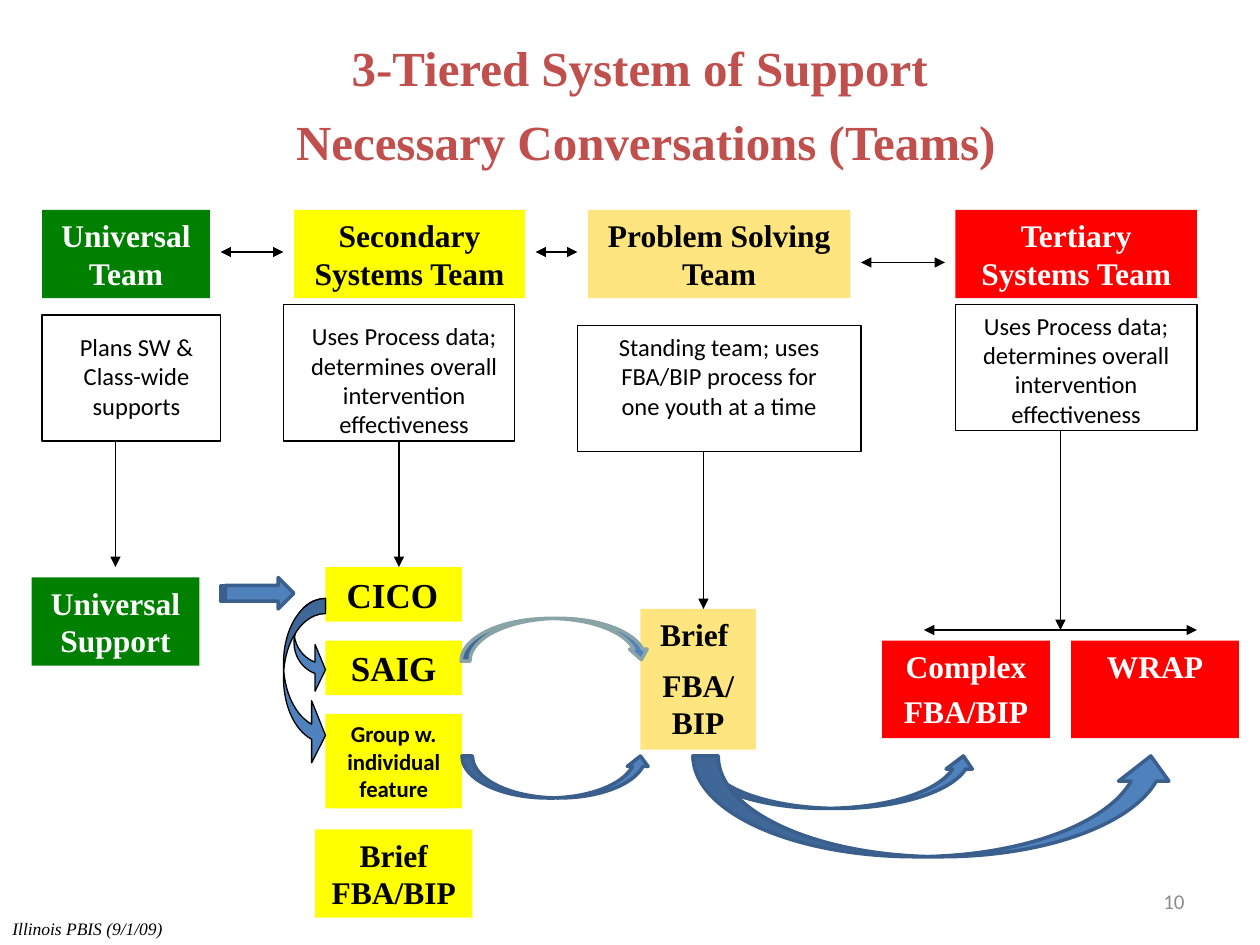
from dataclasses import dataclass
from lxml.etree import SubElement
from pptx import Presentation
from pptx.dml.color import RGBColor
from pptx.enum.shapes import MSO_CONNECTOR, MSO_SHAPE
from pptx.enum.text import MSO_ANCHOR, MSO_AUTO_SIZE, PP_ALIGN
from pptx.oxml.ns import qn
from pptx.util import Emu, Pt

PX = 914400 // 120


@dataclass(frozen=True)
class Theme:
    """Hold the colours, fonts and type sizes."""
    black: str = "000000"
    white: str = "FFFFFF"
    brick: str = "C0504D"
    green: str = "008000"
    yellow: str = "FFFF00"
    gold: str = "FFCC00"
    red: str = "FF0000"
    blue: str = "4F81BD"
    navy: str = "3A5F8C"
    sage: str = "89A4A7"
    grey: str = "8C8C8C"
    serif: str = "Times New Roman"
    sans: str = "Calibri"
    title: int = 28
    large: int = 20
    head: int = 18
    body: int = 14
    small: int = 13
    page: int = 12
    foot: int = 10


T = Theme()
LEFT, MID, RIGHT = PP_ALIGN.LEFT, PP_ALIGN.CENTER, PP_ALIGN.RIGHT


def px(*vals):
    """Turn pixel lengths into EMU."""
    return [Emu(v * PX) for v in vals]


def apply(obj, vals):
    """Set each attribute named in a dict."""
    for key, val in vals.items():
        setattr(obj, key, val)


def paint(fill, hue, alpha=100):
    """Fill with one colour, see-through if alpha is under 100."""
    fill.solid()
    fill.fore_color.rgb = RGBColor.from_string(hue)
    if alpha < 100:
        node = fill._xPr.find(qn("a:solidFill"))[0]
        SubElement(node, qn("a:alpha"), val=str(alpha * 1000))


def write(shape, paras, size, hue=T.black, face=T.serif, bold=False,
          slant=False, align=MID, gap=0, grow=True, anchor=MSO_ANCHOR.TOP):
    """Put styled paragraphs into a shape, gap in percent of a line."""
    frame = shape.text_frame
    apply(frame, {
        "word_wrap": True, "vertical_anchor": anchor,
        "auto_size": MSO_AUTO_SIZE.SHAPE_TO_FIT_TEXT if grow else MSO_AUTO_SIZE.NONE,
    })
    look = {"name": face, "size": Pt(size), "bold": bold, "italic": slant}
    for i, words in enumerate(paras):
        para = frame.add_paragraph() if i else frame.paragraphs[0]
        apply(para, {"text": words, "alignment": align})
        space = SubElement(para._p.get_or_add_pPr(), qn("a:spcBef"))
        SubElement(space, qn("a:spcPct"), val=str(gap * 1000))
        for run in para.runs:
            apply(run.font, look)
            run.font.color.rgb = RGBColor.from_string(hue)


def label(slide, at, paras, size, **style):
    """Add a text box."""
    write(slide.shapes.add_textbox(*px(*at)), paras, size, **style)


def form(slide, kind, at, fill=None, line=None, width=0.75, alpha=100):
    """Add a flat preset shape."""
    shape = slide.shapes.add_shape(kind, *px(*at))
    shape.shadow.inherit = False
    if fill:
        paint(shape.fill, fill, alpha)
    else:
        shape.fill.background()
    if line:
        paint(shape.line.fill, line)
        shape.line.width = Pt(width)
    else:
        shape.line.fill.background()
    return shape


def block(slide, at, fill, paras, size=T.head, alpha=100, **style):
    """Add a filled box with bold text."""
    hue = T.white if fill in (T.green, T.red) else T.black
    shape = form(slide, MSO_SHAPE.RECTANGLE, at, fill, alpha=alpha)
    write(shape, paras, size, hue=hue, bold=True, **style)


def link(slide, ends, both=False):
    """Add a thin line with one or two arrowheads."""
    line = slide.shapes.add_connector(MSO_CONNECTOR.STRAIGHT, *px(*ends))
    paint(line.line.fill, T.black)
    line.line.width = Pt(0.75)
    stroke = line.line._get_or_add_ln()
    for end in ("headEnd", "tailEnd") if both else ("tailEnd",):
        SubElement(stroke, qn(f"a:{end}"), type="triangle")
    SubElement(line._element.spPr, qn("a:effectLst"))


def arrow(slide, kind, at, line=T.navy, width=2, bends=(), turn=0, flip=False):
    """Add a blue block arrow."""
    shape = form(slide, kind, at, T.blue, line, width)
    for i, bend in enumerate(bends):
        shape.adjustments[i] = bend
    shape.rotation = turn
    if flip:
        shape._element.spPr.xfrm.set("flipV", "1")


def teams(slide):
    """Draw the four teams and their tasks."""
    duty = "Uses Process data; determines overall intervention effectiveness"
    rows = [
        (40, 160, T.green, "Universal\nTeam", 100,
         (40, 300, 170, 120), (50, 310, 160, 97), "Plans SW & Class-wide supports"),
        (280, 220, T.yellow, "Secondary Systems Team", 100,
         (270, 290, 220, 130), (270, 300, 230, 125), duty),
        (560, 250, T.gold, "Problem Solving Team", 50,
         (550, 310, 270, 120), (560, 310, 250, 97),
         "Standing team; uses FBA/BIP process for one youth at a time"),
        (910, 230, T.red, "Tertiary Systems Team", 100,
         (910, 290, 230, 120), (910, 290, 230, 125), duty),
    ]
    for x, wide, fill, name, alpha, edge, spot, task in rows:
        block(slide, (x, 200, wide, 84), fill, [name], alpha=alpha, gap=50)
        form(slide, MSO_SHAPE.RECTANGLE, edge, line=T.black)
        label(slide, spot, [task], T.body, face=T.sans, gap=15)


def supports(slide):
    """Draw the supports that the teams provide."""
    block(slide, (30, 550, 160, 84), T.green, ["Universal Support"], gap=50)
    block(slide, (310, 540, 130, 52), T.yellow, [" CICO"], T.large, align=LEFT, gap=50)
    block(slide, (310, 610, 130, 52), T.yellow, ["SAIG"], T.large, gap=50)
    block(slide, (310, 680, 130, 90), T.yellow, ["Group w. individual", "feature"],
          T.small, face=T.sans)
    block(slide, (300, 790, 150, 84), T.yellow, ["Brief FBA/BIP"])
    block(slide, (610, 580, 110, 134), T.gold, ["Brief ", "FBA/BIP"], alpha=50, gap=40)
    block(slide, (840, 610, 160, 93), T.red, ["Complex", "FBA/BIP"], gap=25)
    block(slide, (1020, 610, 160, 93), T.red, ["WRAP"], gap=25)


def flows(slide):
    """Draw the lines and arrows between the boxes."""
    for x, top, low in ((110, 420, 540), (380, 420, 540), (670, 430, 580), (1010, 410, 600)):
        link(slide, (x, top, x, low))
    for x, end, y in ((210, 270, 240), (510, 550, 240), (820, 900, 250), (880, 1140, 600)):
        link(slide, (x, y, end, y), both=True)
    for at in ((280, 570, 30, 90), (270, 570, 40, 160)):
        arrow(slide, MSO_SHAPE.CURVED_RIGHT_ARROW, at, T.black, 0.75, (0.36, 1.48, 0.33))
    arrow(slide, MSO_SHAPE.STRIPED_RIGHT_ARROW, (210, 550, 70, 30))
    for at in ((660, 720, 270, 50), (660, 720, 460, 96), (440, 720, 180, 40)):
        arrow(slide, MSO_SHAPE.CURVED_UP_ARROW, at)
    arrow(slide, MSO_SHAPE.CURVED_UP_ARROW, (439, 589, 180, 40), T.sage,
          bends=(0.21, 0.42, 0.25), turn=359.5, flip=True)


def main():
    """Build the slide and save it."""
    deck = Presentation()
    deck.slide_width, deck.slide_height = px(1200, 900)
    slide = deck.slides.add_slide(deck.slide_layouts[6])
    label(slide, (90, 30, 1050, 142),
          ["3-Tiered System of Support ", "Necessary Conversations (Teams)"],
          T.title, hue=T.brick, bold=True, gap=30)
    teams(slide)
    supports(slide)
    flows(slide)
    label(slide, (0, 868, 280, 32), ["Illinois PBIS (9/1/09)"], T.foot,
          slant=True, align=LEFT, gap=50)
    label(slide, (860, 834, 280, 48), ["10"], T.page, hue=T.grey, face=T.sans,
          align=RIGHT, grow=False, anchor=MSO_ANCHOR.MIDDLE)
    deck.save("out.pptx")


if __name__ == "__main__":
    main()
